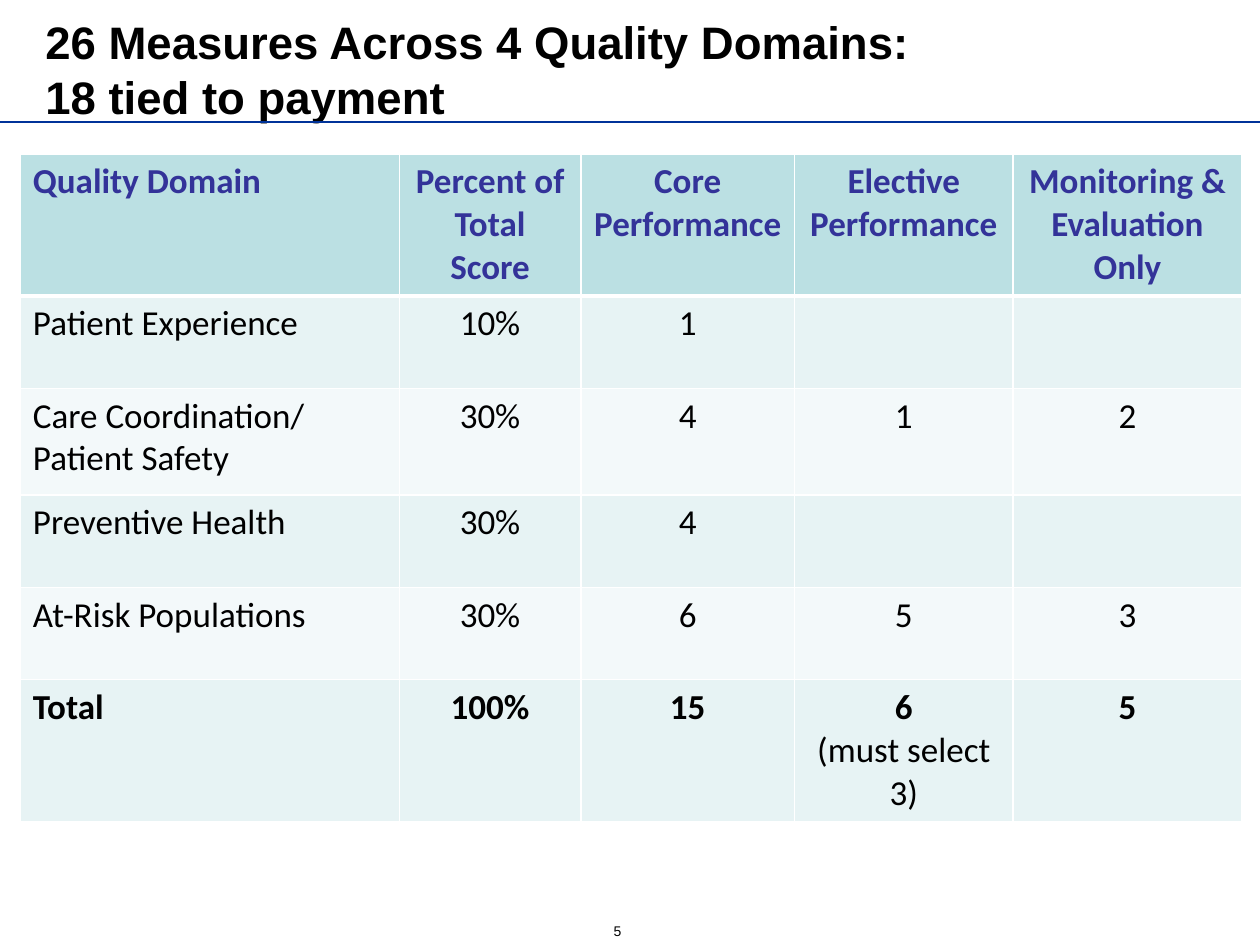
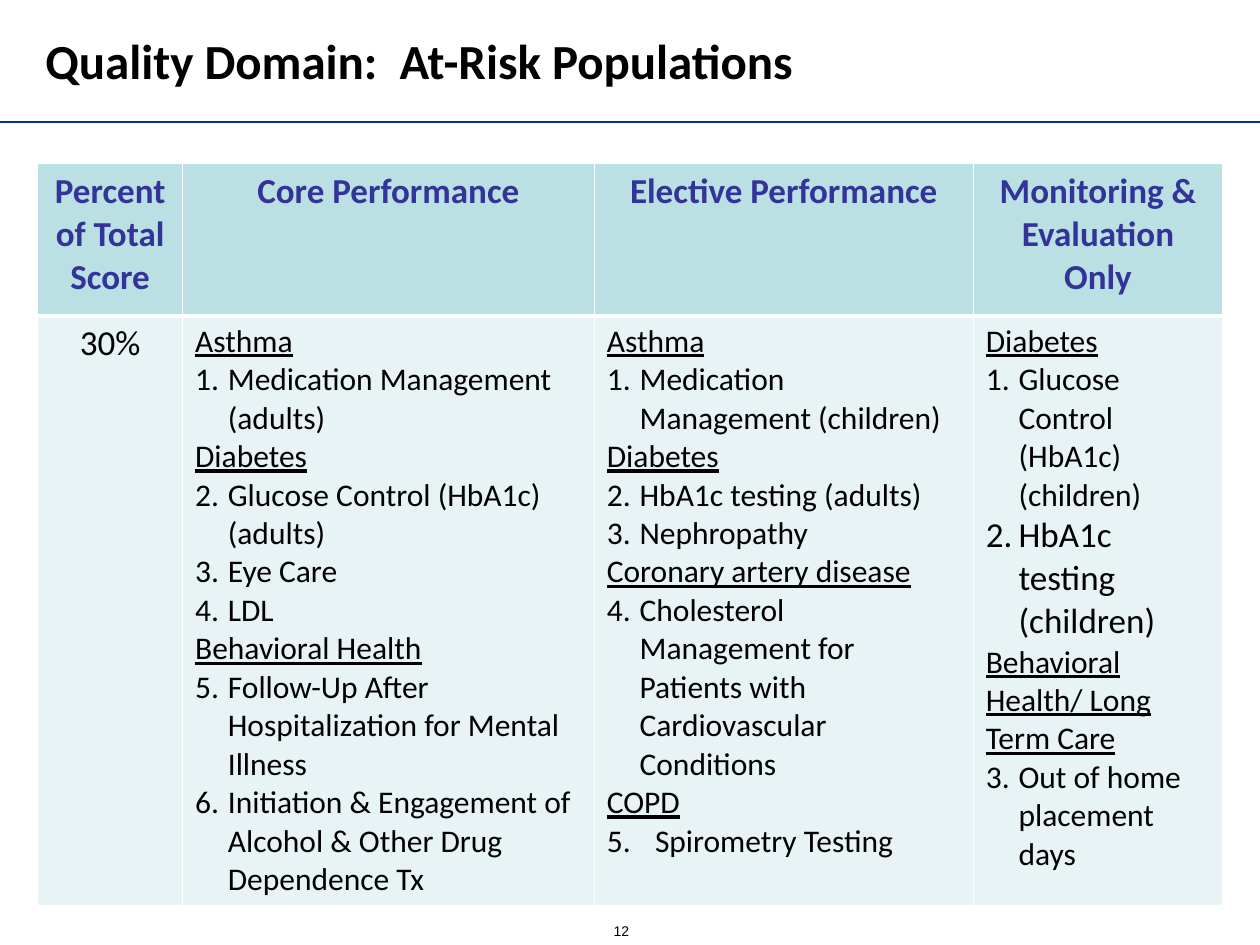
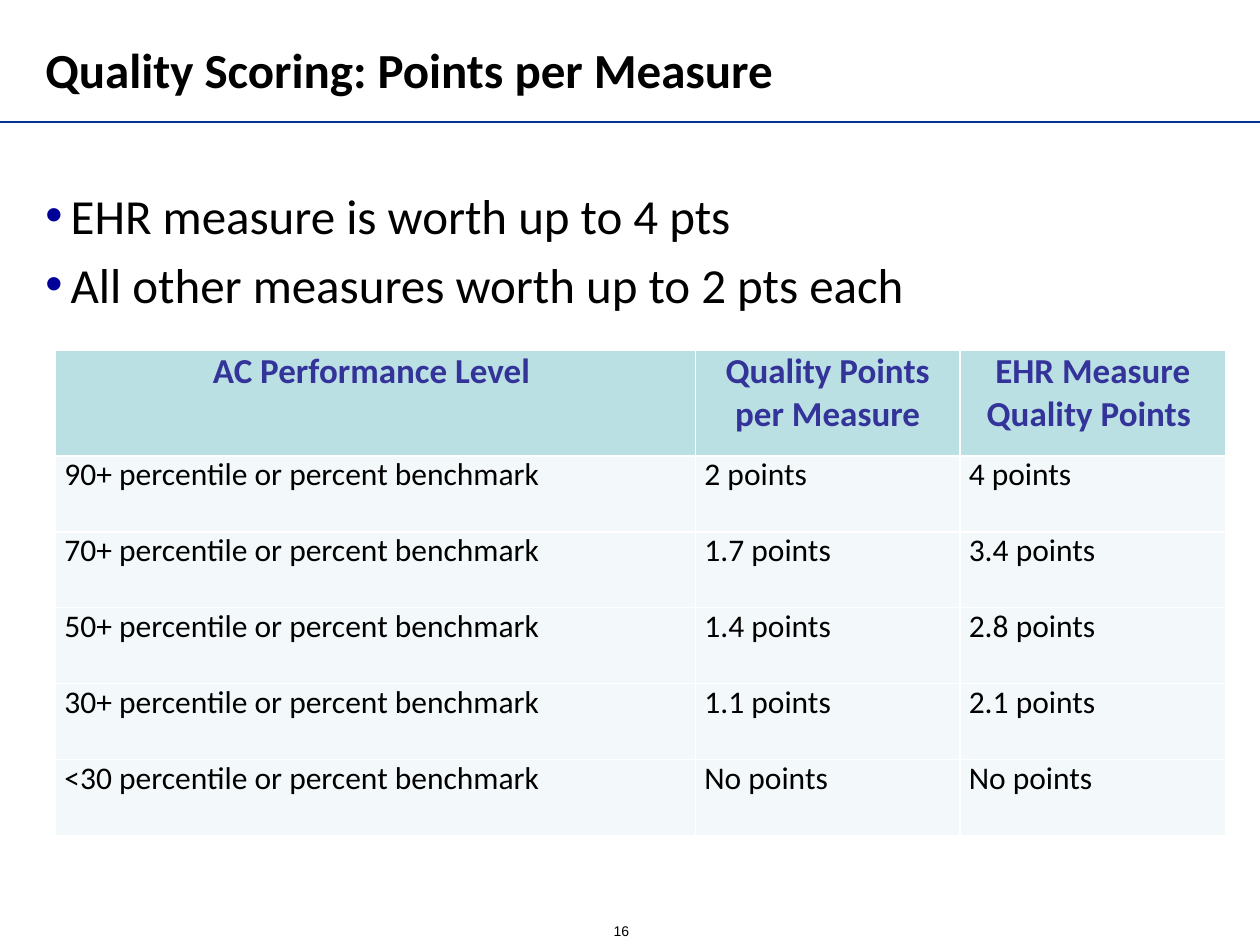
"""Build three slides on quality measures, domains and scoring."""
from dataclasses import dataclass

from lxml.etree import SubElement
from pptx import Presentation
from pptx.dml.color import RGBColor as RGB
from pptx.enum.shapes import MSO_CONNECTOR as CONN
from pptx.enum.text import MSO_ANCHOR as ANCHOR, MSO_AUTO_SIZE as FIT, PP_ALIGN as ALIGN
from pptx.oxml.ns import qn
from pptx.util import Cm, Pt


@dataclass(frozen=True)
class Theme:
    """Colours, fonts and type sizes of the deck."""
    ink: str = "000000"
    rule: str = "003399"
    bullet: str = "000099"
    head_ink: str = "333399"
    head: str = "BBE0E3"
    band: str = "E7F3F4"
    pale: str = "F3F9FA"
    border: str = "FFFFFF"
    sans: str = "Arial"
    text: str = "Calibri"
    title_pt: int = 28
    long_title_pt: int = 26
    cell_pt: int = 20
    list_pt: int = 18
    number_pt: int = 8


T = Theme()
ALIGNS = {"l": ALIGN.LEFT, "c": ALIGN.CENTER}


def write(p, text, size=T.cell_pt, font=T.text, color=T.ink, bold=False,
          underline=False, align="l", before=0):
    """Write text into a paragraph with the given format, breaking at newlines."""
    p.alignment = ALIGNS[align]
    p.space_before = Pt(before)
    for i, line in enumerate(text.split("\n")):
        if i:
            p.add_line_break()
        r = p.add_run()
        r.text = line
        f = r.font
        f.size, f.name, f.bold, f.underline = Pt(size), font, bold, underline
        f.color.rgb = RGB.from_string(color)


def paragraphs(tf, count):
    """Return the given number of paragraphs from an empty text frame."""
    return [tf.paragraphs[0]] + [tf.add_paragraph() for _ in range(count - 1)]


def mark(p, tag, indent, color=None, **attrs):
    """Give a paragraph a hanging bullet or number."""
    pPr = p._p.get_or_add_pPr()
    pPr.set("marL", str(Cm(indent)))
    pPr.set("indent", str(-Cm(indent)))
    if color:
        SubElement(SubElement(pPr, qn("a:buClr")), qn("a:srgbClr"), val=color)
    SubElement(pPr, qn(tag), **attrs)


def write_measures(tf, groups):
    """Write underlined group names, each followed by its numbered measures."""
    rows, start = [], 1
    for name, measures in groups:
        rows.append((name, None, {}))
        for item in measures:
            text, options = item if isinstance(item, tuple) else (item, {})
            rows.append((text, start, options))
        start += len(measures)
    for p, (text, first, options) in zip(paragraphs(tf, len(rows)), rows):
        if first:
            mark(p, "a:buAutoNum", options.get("indent", 0.66),
                 type="arabicPeriod", startAt=str(first))
        write(p, text, size=options.get("size", T.list_pt), underline=not first)


class Deck:
    """Holds the presentation, its theme and the current slide."""

    def __init__(self, theme):
        """Start an empty 4:3 presentation."""
        self.t = theme
        self.prs = Presentation()
        self.prs.slide_width, self.prs.slide_height = Cm(25.4), Cm(19.05)

    def slide(self, number, layout=5):
        """Add a slide with its rule and number."""
        self.s = self.prs.slides.add_slide(self.prs.slide_layouts[layout])
        line = self.s.shapes.add_connector(CONN.STRAIGHT, 0, Cm(2.46), Cm(25.4), Cm(2.46))
        line.line.color.rgb = RGB.from_string(self.t.rule)
        line.line.width = Pt(1.5)
        SubElement(line._element.spPr, qn("a:effectLst"))
        tf = self.s.shapes.add_textbox(Cm(12.12), Cm(18.47), Cm(0.86), Cm(0.58)).text_frame
        tf.word_wrap = False
        write(tf.paragraphs[0], str(number), size=self.t.number_pt, font=self.t.sans)

    def place(self, sp, left, top, width, height, anchor):
        """Move a placeholder and return its text frame."""
        sp.left, sp.top, sp.width, sp.height = map(Cm, (left, top, width, height))
        tf = sp.text_frame
        tf.auto_size, tf.word_wrap, tf.vertical_anchor = FIT.NONE, True, anchor
        return tf

    def title(self, text, top=0.36, anchor=ANCHOR.MIDDLE, **fmt):
        """Fill the title placeholder."""
        tf = self.place(self.s.shapes.title, 0.66, top, 19.3, 2.06, anchor)
        if anchor == ANCHOR.TOP:
            tf.margin_top = 0
        write(tf.paragraphs[0], text, **{"size": self.t.title_pt, "bold": True, **fmt})

    def bullets(self, items):
        """Fill the body placeholder with a bulleted list."""
        tf = self.place(self.s.placeholders[1], 0.66, 3.61, 23.06, 3.1, ANCHOR.TOP)
        for i, (p, text) in enumerate(zip(paragraphs(tf, len(items)), items)):
            mark(p, "a:buChar", 0.51, self.t.bullet, char="•")
            write(p, text, size=self.t.title_pt, before=5.6 if i else 0)

    def borders(self, cell, bottom):
        """Draw the four borders of a cell."""
        tcPr = cell._tc.get_or_add_tcPr()
        for side, width in (("L", 1), ("R", 1), ("T", 1), ("B", bottom)):
            ln = SubElement(tcPr, qn(f"a:ln{side}"), w=str(Pt(width)))
            SubElement(SubElement(ln, qn("a:solidFill")), qn("a:srgbClr"), val=self.t.border)

    def table(self, left, top, cols, heights, rows, head_align, body_align, bands,
              size=T.cell_pt, head_rule=3, inset=None, total=False):
        """Add a table with a header row and banded body rows."""
        table = self.s.shapes.add_table(len(rows), len(cols), Cm(left), Cm(top),
                                        Cm(sum(cols)), Cm(sum(heights))).table
        for column, width in zip(table.columns, cols):
            column.width = Cm(width)
        for i, (row, height) in enumerate(zip(rows, heights)):
            table.rows[i].height = Cm(height)
            head, last = i == 0, total and i == len(rows) - 1
            fill = self.t.head if head else bands[(i - 1) % len(bands)]
            for j, value in enumerate(row):
                cell = table.cell(i, j)
                self.borders(cell, head_rule if head else 1)
                cell.fill.solid()
                cell.fill.fore_color.rgb = RGB.from_string(fill)
                if inset is not None:
                    cell.margin_left = cell.margin_right = Cm(inset)
                    cell.margin_top = cell.margin_bottom = 0
                if isinstance(value, list):
                    write_measures(cell.text_frame, value)
                    continue
                lines = value.split("\n")
                for k, p in enumerate(paragraphs(cell.text_frame, len(lines))):
                    write(p, lines[k], size=self.t.cell_pt if head else size,
                          color=self.t.head_ink if head else self.t.ink,
                          bold=head or (last and k == 0),
                          align=(head_align if head else body_align)[j])


def domains(d):
    """Build the overview of quality domains."""
    d.slide(5)
    d.title("26 Measures Across 4 Quality Domains:\n18 tied to payment",
            size=T.long_title_pt, font=T.sans)
    d.table(0.41, 3.1, [7.64, 3.66, 4.31, 4.4, 4.62],
            [2.87, 1.86, 2.15, 1.86, 1.86, 2.87], [
        ["Quality Domain", "Percent of Total Score", "Core Performance",
         "Elective Performance", "Monitoring & Evaluation Only"],
        ["Patient Experience", "10%", "1", "", ""],
        ["Care Coordination/ Patient Safety", "30%", "4", "1", "2"],
        ["Preventive Health", "30%", "4", "", ""],
        ["At-Risk Populations", "30%", "6", "5", "3"],
        ["Total", "100%", "15", "6\n(must select 3)", "5"],
    ], "lcccc", "lcccc", [T.band, T.pale], total=True)


def at_risk(d):
    """Build the list of at-risk population measures."""
    core = [
        ("Asthma", ["Medication Management (adults)"]),
        ("Diabetes", ["Glucose Control (HbA1c) (adults)", "Eye Care", "LDL"]),
        ("Behavioral Health", [
            "Follow-Up After Hospitalization for Mental Illness",
            "Initiation & Engagement of Alcohol & Other Drug Dependence Tx"]),
    ]
    elective = [
        ("Asthma", ["Medication Management (children)"]),
        ("Diabetes", ["HbA1c testing (adults)", "Nephropathy"]),
        ("Coronary artery disease", [
            "Cholesterol Management for Patients with Cardiovascular Conditions"]),
        ("COPD", [("Spirometry Testing", {"indent": 0.97})]),
    ]
    monitoring = [
        ("Diabetes", ["Glucose Control (HbA1c) (children)",
                      ("HbA1c testing (children)", {"size": T.cell_pt})]),
        ("Behavioral Health/ Long Term Care", ["Out of home placement days"]),
    ]
    d.slide(12)
    d.title("Quality Domain:  At-Risk Populations", top=0.61, anchor=ANCHOR.TOP)
    d.table(0.76, 3.3, [2.92, 8.3, 7.64, 5.03], [3.07, 11.88], [
        ["Percent of Total Score", "Core Performance", "Elective Performance",
         "Monitoring & Evaluation Only"],
        ["30%", core, elective, monitoring],
    ], "cccc", "clll", [T.band])


def scoring(d):
    """Build the table of points per measure."""
    levels = [("90+", "2", "4"), ("70+", "1.7", "3.4"), ("50+", "1.4", "2.8"),
              ("30+", "1.1", "2.1"), ("<30", "No", "No")]
    d.slide(16, layout=1)
    d.title("Quality Scoring: Points per Measure")
    d.bullets(["EHR measure is worth up to 4 pts", "All other measures worth up to 2 pts each"])
    d.table(1.12, 7.06, [12.9, 5.33, 5.36], [2.13] + [1.53] * len(levels), [
        ["AC Performance Level ", "Quality Points per Measure", "EHR Measure Quality Points "],
        *([f"{level} percentile or percent benchmark", f"{points} points", f"{ehr} points"]
          for level, points, ehr in levels),
    ], "ccc", "lll", [T.pale], size=T.list_pt, head_rule=1, inset=0.18)


def main():
    """Build and save the deck."""
    d = Deck(T)
    for build in (domains, at_risk, scoring):
        build(d)
    d.prs.save("out.pptx")


if __name__ == "__main__":
    main()
